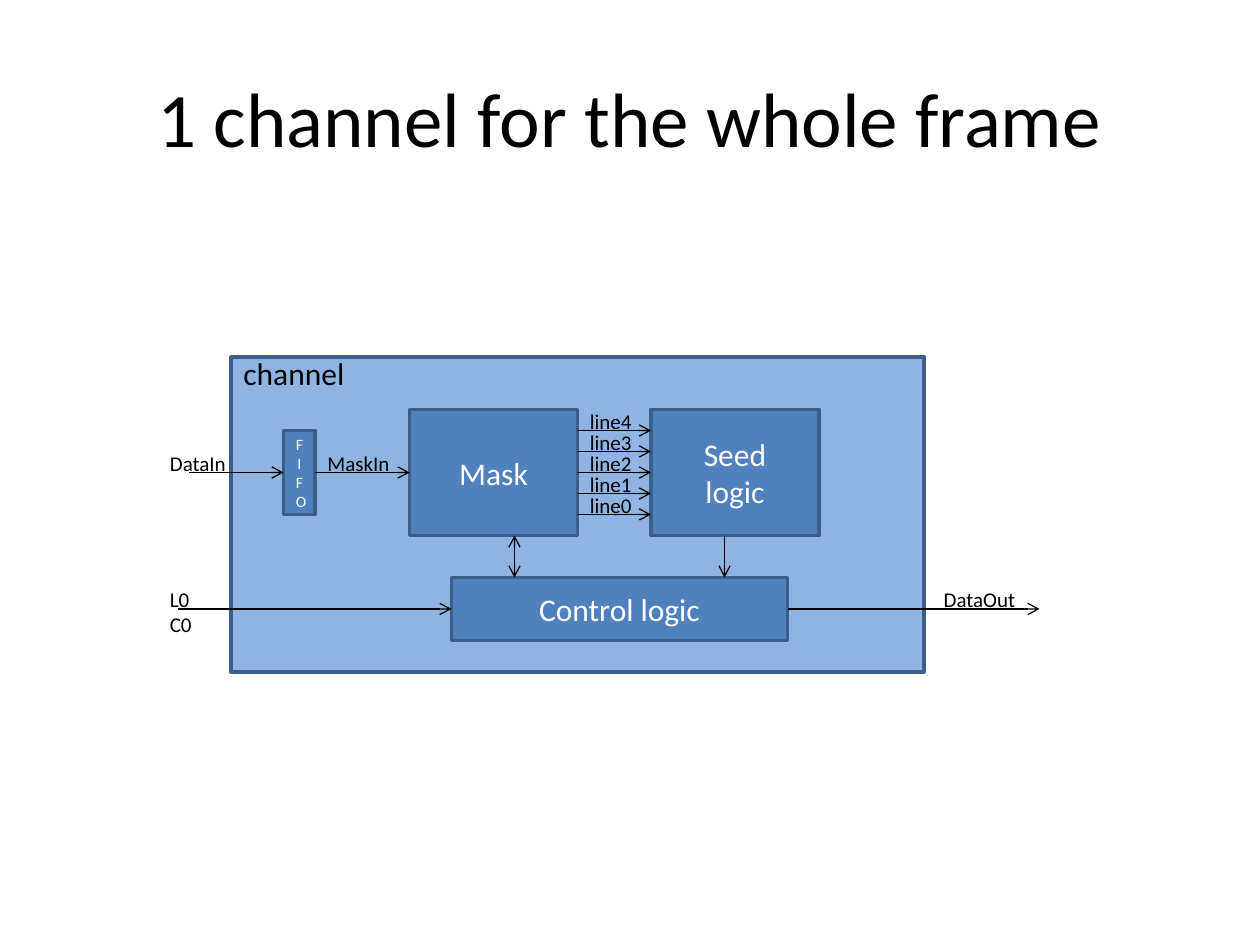
from pptx import Presentation
from pptx.dml.color import RGBColor
from pptx.enum.shapes import MSO_CONNECTOR, MSO_SHAPE
from pptx.enum.text import MSO_ANCHOR, MSO_AUTO_SIZE, PP_ALIGN
from pptx.oxml.ns import qn
from pptx.util import Inches, Pt
from lxml.etree import SubElement

COLS, ROWS = 120, 90
CELL = Inches(10) / COLS
BLACK = RGBColor(0x00, 0x00, 0x00)
WHITE = RGBColor(0xFF, 0xFF, 0xFF)
PALE = RGBColor(0x8E, 0xB4, 0xE3)
BLUE = RGBColor(0x4F, 0x81, 0xBD)
EDGE = RGBColor(0x3A, 0x5F, 0x8C)


def cells(*counts):
    """Turn counts of grid cells into lengths."""
    return [round(count * CELL) for count in counts]


def style(frame, size, color, align):
    """Format every run in a text frame."""
    for para in frame.paragraphs:
        para.alignment = align
        for run in para.runs:
            run.font.name = "Calibri"
            run.font.size = Pt(size)
            run.font.color.rgb = color


def block(slide, box, text="", size=18, fill=BLUE):
    """Draw a bordered rectangle with centred text."""
    shape = slide.shapes.add_shape(MSO_SHAPE.RECTANGLE, *cells(*box))
    shape.shadow.inherit = False
    shape.fill.solid()
    shape.fill.fore_color.rgb = fill
    shape.line.color.rgb = EDGE
    shape.line.width = Pt(2)
    frame = shape.text_frame
    frame.text = text
    frame.word_wrap = True
    frame.vertical_anchor = MSO_ANCHOR.MIDDLE
    style(frame, size, WHITE, PP_ALIGN.CENTER)
    return shape


def label(slide, box, text, size=12):
    """Write unwrapped text in a box that fits it."""
    frame = slide.shapes.add_textbox(*cells(*box)).text_frame
    frame.text = text
    frame.word_wrap = False
    frame.auto_size = MSO_AUTO_SIZE.SHAPE_TO_FIT_TEXT
    style(frame, size, BLACK, PP_ALIGN.LEFT)


def arrow(slide, start, end, source=None, target=None, both=False):
    """Draw an arrow, joined to the sides of blocks where given."""
    line = slide.shapes.add_connector(
        MSO_CONNECTOR.STRAIGHT, *cells(*start, *end))
    line.line.color.rgb = BLACK
    line.line.width = Pt(0.75)
    if source:
        line.begin_connect(source, 3)
    if target:
        line.end_connect(target, 1)
    stroke = line.line._get_or_add_ln()
    for tag in ("a:headEnd", "a:tailEnd")[0 if both else 1:]:
        SubElement(stroke, qn(tag), type="arrow")
    SubElement(line._element.spPr, qn("a:effectLst"))


def title(slide, box, text):
    """Write the centred slide title."""
    frame = slide.shapes.add_textbox(*cells(*box)).text_frame
    frame.text = text
    frame.word_wrap = True
    frame.vertical_anchor = MSO_ANCHOR.MIDDLE
    style(frame, 44, BLACK, PP_ALIGN.CENTER)


def bus(slide, box, names):
    """Draw evenly spaced named arrows across the box."""
    left, top, width, height = box
    step = height / (len(names) + 1)
    for row, name in enumerate(names, 1):
        level = top + row * step
        arrow(slide, (left, level), (left + width, level))
        label(slide, (left, level - 2.7, 6.5, 3.6), name)


def channel(slide, box):
    """Draw the channel with its blocks and signals."""
    left, top, width, height = box
    block(slide, box, fill=PALE)
    label(slide, (left, top - 0.9, 12.1, 4.8), "channel", 18)
    mask = block(slide, (left + 17, top + 5, 16, 12), "Mask")
    block(slide, (left + 40, top + 5, 16, 12), "Seed\nlogic")
    fifo = block(slide, (left + 5, top + 7, 3, 8), "FIFO", 9)
    logic = block(slide, (left + 21, top + 21, 32, 6), "Control logic")
    bus(slide, (left + 33, top + 5, 7, 12),
        ["line4", "line3", "line2", "line1", "line0"])

    high, low = top + 11, top + 24
    arrow(slide, (left - 4, high), (left + 5, high), target=fifo)
    arrow(slide, (left + 8, high), (left + 17, high), fifo, mask)
    arrow(slide, (left - 5, low), (left + 21, low), target=logic)
    arrow(slide, (left + 53, low), (left + width + 11, low), logic)
    arrow(slide, (left + 27, top + 17), (left + 27, top + 21), both=True)
    arrow(slide, (left + 47, top + 17), (left + 47, top + 21))

    for across, level, wide, tall, text in (
            (-7, high, 7.8, 3.6, "DataIn"),
            (8, high, 8.4, 3.6, "MaskIn"),
            (-7, low, 4.6, 6, "L0\nC0"),
            (width + 0.7, low, 9.4, 3.6, "DataOut")):
        label(slide, (left + across, level - 2.7, wide, tall), text)


def main():
    """Build and save the slide."""
    deck = Presentation()
    deck.slide_width, deck.slide_height = cells(COLS, ROWS)
    slide = deck.slides.add_slide(deck.slide_layouts[6])
    title(slide, (6, 3.6, 108, 15), "1 channel for the whole frame")
    channel(slide, (22, 34, 66, 30))
    deck.save("out.pptx")


if __name__ == "__main__":
    main()
